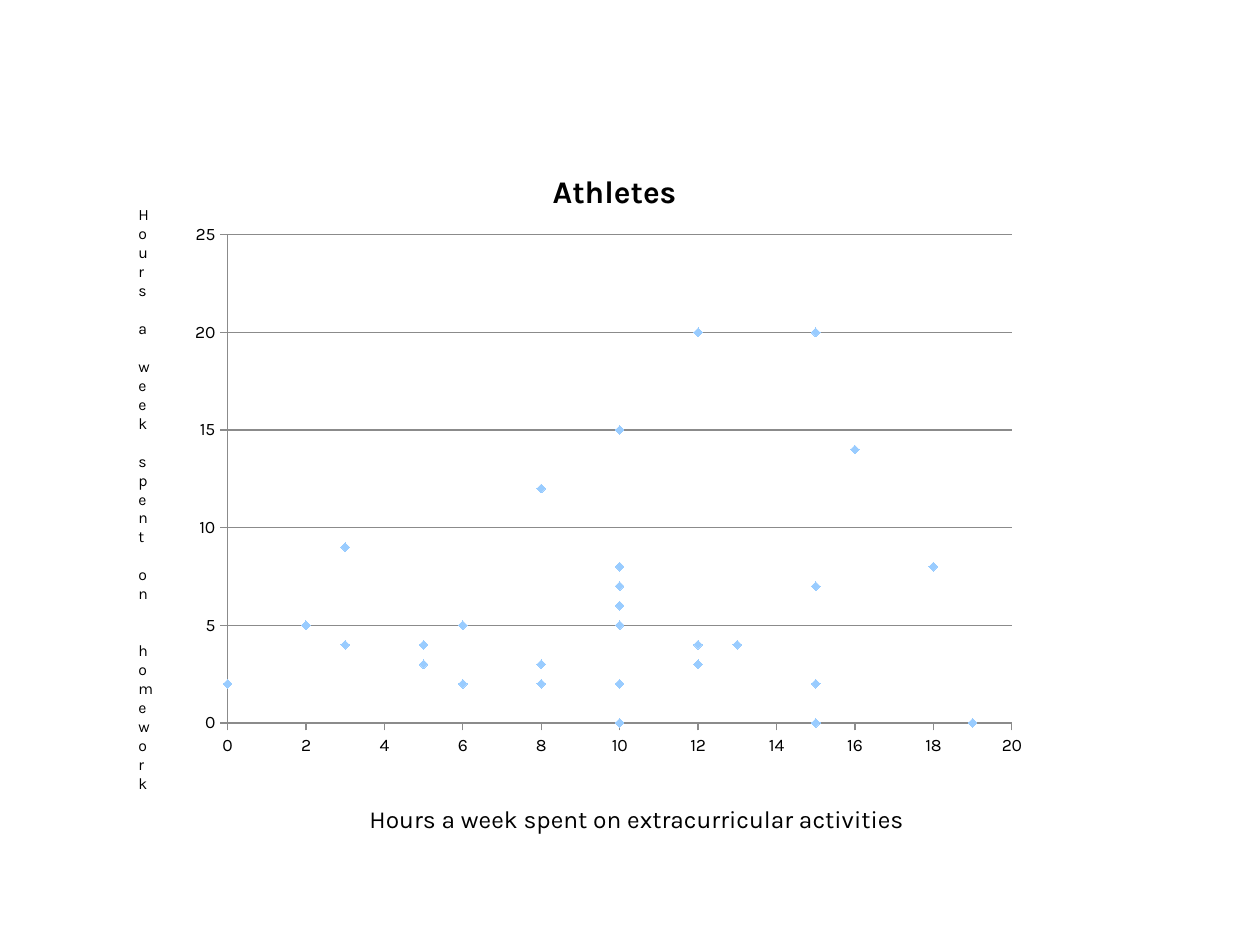
from lxml import etree
from pptx import Presentation
from pptx.chart.data import XyChartData
from pptx.dml.color import RGBColor
from pptx.enum.chart import XL_CHART_TYPE, XL_MARKER_STYLE, XL_TICK_MARK
from pptx.enum.text import MSO_AUTO_SIZE
from pptx.oxml.ns import qn
from pptx.util import Pt

SCATTER = XL_CHART_TYPE.XY_SCATTER
DIAMOND = XL_MARKER_STYLE.DIAMOND
OUTSIDE, NO_TICK = XL_TICK_MARK.OUTSIDE, XL_TICK_MARK.NONE
GROW = MSO_AUTO_SIZE.SHAPE_TO_FIT_TEXT

# Content: (extracurricular hours, homework hours) for each athlete
TITLE = "Athletes"
ATHLETES = [
    (10, 0), (0, 2), (6, 2), (8, 2), (12, 3), (10, 2), (15, 2), (15, 2),
    (5, 3), (8, 12), (12, 20), (10, 15), (15, 20), (16, 14), (2, 5), (8, 3),
    (3, 9), (10, 7), (15, 7), (10, 5), (10, 6), (6, 5), (12, 4), (13, 4),
    (5, 4), (3, 4), (19, 0), (15, 0), (18, 8), (10, 8), (10, 2),
]
# Axis captions: text, type size key, box in points (left, top, width, height)
CAPTIONS = [
    ("Hours a week spent on extracurricular activities", "x_caption",
     (204, 456, 336, 24.5)),
    ("Hours a week spent on  homework", "y_caption", (72, 113.6, 14.4, 334)),
]
CHART_BOX = (102, 78, 492, 360)
PLOT_LAYOUT = {"x": 0.057, "y": 0.156, "w": 0.911, "h": 0.775}
TITLE_LAYOUT = {"x": 0.428, "y": 0.045}

THEME = {
    "font": "Karla",
    "text": RGBColor(0, 0, 0),
    "marker": RGBColor(0x99, 0xCC, 0xFF),
    "line": RGBColor(0x8B, 0x8B, 0x8B),
    "size": {"title": 18, "axis": 10, "x_caption": 14, "y_caption": 9},
}


def style_font(font, size, bold=False):
    font.name = THEME["font"]
    font.size = Pt(THEME["size"][size])
    font.bold = bold
    font.color.rgb = THEME["text"]


def style_line(line):
    line.color.rgb = THEME["line"]
    line.width = Pt(0.75)


def set_layout(parent, index, fractions, inner=False):
    """Place a chart part by fractions of the chart area."""
    old = parent.find(qn("c:layout"))
    if old is not None:
        parent.remove(old)
    layout = etree.Element(qn("c:layout"))
    manual = etree.SubElement(layout, qn("c:manualLayout"))
    settings = [("layoutTarget", "inner")] if inner else []
    settings += [("xMode", "edge"), ("yMode", "edge"), *fractions.items()]
    for tag, value in settings:
        etree.SubElement(manual, qn(f"c:{tag}")).set("val", str(value))
    parent.insert(index, layout)


def add_scatter(s):
    data = XyChartData()
    points = data.add_series("Series 1")
    for activities, homework in ATHLETES:
        points.add_data_point(activities, homework)
    chart = s.shapes.add_chart(SCATTER, *map(Pt, CHART_BOX), data).chart
    chart.has_legend = False
    style_font(chart.font, "axis")

    # Title
    chart.has_title = True
    r = chart.chart_title.text_frame.paragraphs[0].add_run()
    r.text = TITLE
    style_font(r.font, "title", bold=True)
    chart.chart_title.include_in_layout = False
    set_layout(chart.chart_title._element, 1, TITLE_LAYOUT)
    set_layout(chart._chartSpace.chart.plotArea, 0, PLOT_LAYOUT, inner=True)

    # Axes
    for axis, top, step in ((chart.category_axis, 20, 2),
                            (chart.value_axis, 25, 5)):
        axis.minimum_scale, axis.maximum_scale = 0, top
        axis.major_unit = step
        axis.major_tick_mark, axis.minor_tick_mark = OUTSIDE, NO_TICK
        style_line(axis.format.line)
        style_font(axis.tick_labels.font, "axis")
    chart.category_axis.has_major_gridlines = False
    chart.value_axis.has_major_gridlines = True
    style_line(chart.value_axis.major_gridlines.format.line)

    # Markers without a joining line
    chart.plots[0].vary_by_categories = False
    series = chart.plots[0].series[0]
    series.smooth = False
    series.format.line.fill.background()
    series.marker.style, series.marker.size = DIAMOND, 5
    for fill in (series.marker.format.fill, series.marker.format.line.fill):
        fill.solid()
        fill.fore_color.rgb = THEME["marker"]


def add_caption(s, text, size, box):
    tf = s.shapes.add_textbox(*map(Pt, box)).text_frame
    tf.word_wrap = True
    tf.auto_size = GROW
    r = tf.paragraphs[0].add_run()
    r.text = text
    style_font(r.font, size)


def main():
    prs = Presentation()
    prs.slide_width, prs.slide_height = Pt(720), Pt(540)
    s = prs.slides.add_slide(prs.slide_layouts[6])
    add_scatter(s)
    for caption in CAPTIONS:
        add_caption(s, *caption)
    prs.save("out.pptx")


if __name__ == "__main__":
    main()
